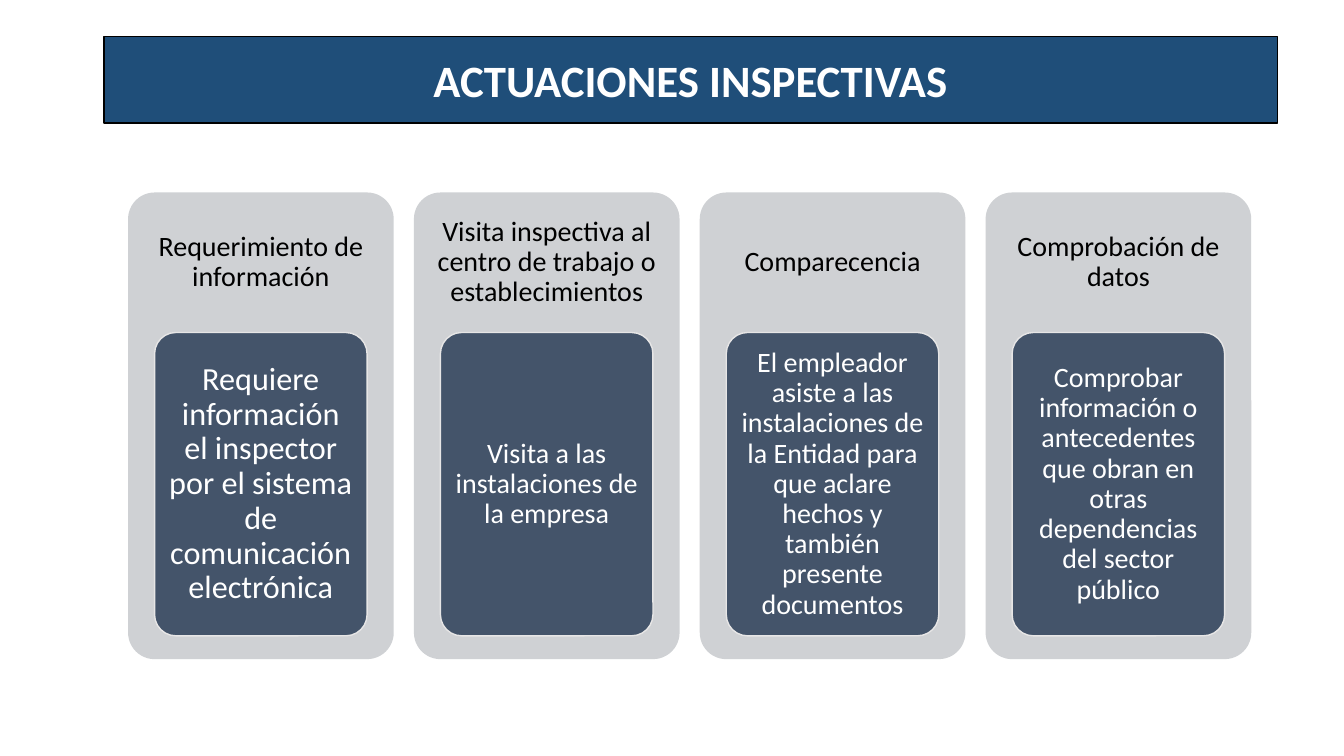
from pptx import Presentation
from pptx import util as u
from pptx.dml.color import RGBColor
from pptx.enum import shapes, text

# Heading, detail and detail size of each card
CARDS = [
    ("Requerimiento de información",
     "Requiere información el inspector por el sistema de comunicación electrónica", 23),
    ("Visita inspectiva al centro de trabajo o establecimientos",
     "Visita a las instalaciones de la empresa", 20),
    ("Comparecencia",
     "El empleador asiste a las instalaciones de la Entidad para que aclare hechos "
     "y también presente documentos", 20),
    ("Comprobación de datos",
     "Comprobar información o antecedentes que obran en otras dependencias "
     "del sector público", 20),
]


def color(value):
    return RGBColor.from_string(value)


def paint(shape, fill, line=None):
    shape.fill.solid()
    shape.fill.fore_color.rgb = color(fill)
    if line:
        shape.line.color.rgb = color(line)
        shape.line.width = u.Pt(1)
    else:
        shape.line.fill.background()


def write(shape, content, size=20, ink="FFFFFF", bold=False, spacing=0.9, insets=(0.1, 0.05)):
    frame = shape.text_frame
    frame.word_wrap = True
    frame.auto_size = text.MSO_AUTO_SIZE.NONE
    frame.vertical_anchor = text.MSO_ANCHOR.MIDDLE
    frame.margin_left = frame.margin_right = u.Inches(insets[0])
    frame.margin_top = frame.margin_bottom = u.Inches(insets[1])
    paragraph = frame.paragraphs[0]
    paragraph.alignment = text.PP_ALIGN.CENTER
    paragraph.line_spacing = spacing
    run = paragraph.add_run()
    run.text = content
    run.font.name = "Calibri"
    run.font.size = u.Pt(size)
    run.font.bold = bold
    run.font.color.rgb = color(ink)


def add_rounded(slide, left, top, width, height, fill, line=None):
    shape = slide.shapes.add_shape(
        shapes.MSO_SHAPE.ROUNDED_RECTANGLE,
        u.Inches(left), u.Inches(top), u.Inches(width), u.Inches(height))
    shape.adjustments[0] = 0.1
    shape.shadow.inherit = False
    paint(shape, fill, line)
    return shape


def add_banner(slide, left, top, width, height):
    title = slide.shapes.title
    title.left, title.top = u.Inches(left), u.Inches(top)
    title.width, title.height = u.Inches(width), u.Inches(height)
    paint(title, "1F4E79", "000000")
    write(title, "ACTUACIONES INSPECTIVAS", size=32, bold=True, spacing=1.0)


def add_card(slide, left, top, width, height, heading, detail, detail_size):
    add_rounded(slide, left, top, width, height, "CFD1D4")

    # Heading fills the top 30 % of the card
    heading_height = 0.3 * height
    heading_box = slide.shapes.add_textbox(
        u.Inches(left), u.Inches(top), u.Inches(width), u.Inches(heading_height))
    write(heading_box, heading, ink="000000", insets=(0.08, 0.08))

    # Detail panel covers 80 % of the width and 65 % of the height
    panel = add_rounded(slide, left + 0.1 * width, top + heading_height,
                        0.8 * width, 0.65 * height, "44546A", "E7E6E6")
    write(panel, detail, size=detail_size, insets=(0.06, 0.04))


def add_cards(slide, left, top, width, height, gap):
    card_width = (width - gap * (len(CARDS) - 1)) / len(CARDS)
    for index, card in enumerate(CARDS):
        add_card(slide, left + index * (card_width + gap), top, card_width, height, *card)


def main():
    presentation = Presentation()
    presentation.slide_width = u.Inches(13.33)
    presentation.slide_height = u.Inches(7.5)
    slide = presentation.slides.add_slide(presentation.slide_layouts[5])
    add_banner(slide, 1.03, 0.36, 11.64, 0.86)
    add_cards(slide, 1.27, 1.91, 11.14, 4.63, gap=0.2)
    presentation.save("out.pptx")


if __name__ == "__main__":
    main()
